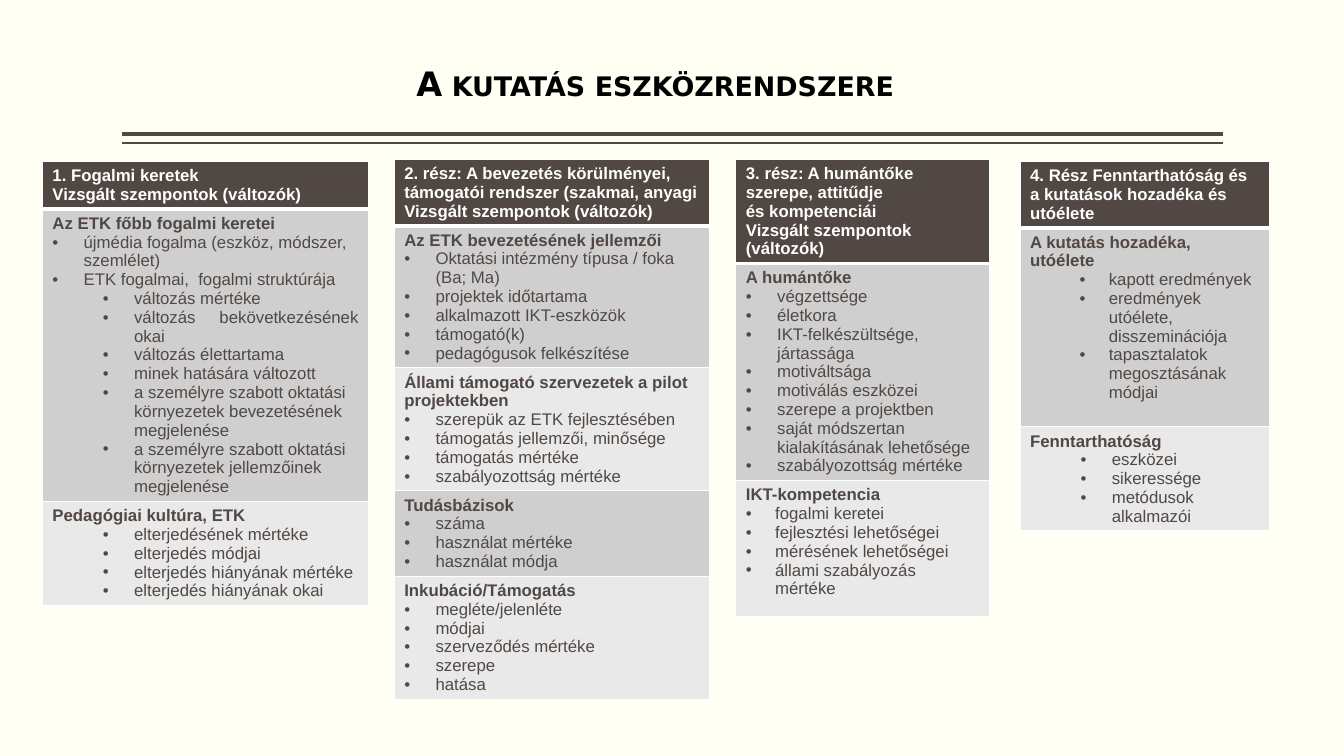
from dataclasses import dataclass

from lxml.etree import SubElement
from pptx import Presentation
from pptx.dml.color import RGBColor
from pptx.enum.shapes import MSO_CONNECTOR as Connector
from pptx.enum.text import MSO_ANCHOR as Anchor, MSO_AUTO_SIZE as AutoSize, PP_ALIGN as Align
from pptx.oxml.ns import qn
from pptx.util import Inches, Pt


@dataclass(frozen=True)
class Theme:
    background: str = "FFFFF3"
    dark: str = "514843"
    white: str = "FFFFFF"
    black: str = "000000"
    bands: tuple = ("D0CFCF", "E9E9E9")
    title_font: str = "DejaVu Sans"
    body_font: str = "Arial"
    title_size: int = 24
    body_size: int = 12


@dataclass(frozen=True)
class ListStyle:
    left: float = 0.31
    hanging: float = 0.31
    align: Align = None
    level: int = 0


@dataclass(frozen=True)
class Box:
    left: float
    top: float
    width: float
    height: float = 0


THEME = Theme()
PLAIN = ListStyle(0, 0)
JUSTIFIED = ListStyle(0, 0, Align.JUSTIFY)
OUTER = ListStyle()
TIGHT = ListStyle(0.29, 0.29)
INNER = ListStyle(0.81, 0.31)
INNER_JUSTIFIED = ListStyle(0.81, 0.31, Align.JUSTIFY)
SUBLEVEL = ListStyle(0.81, 0.31, level=1)
SUBLEVEL_JUSTIFIED = ListStyle(0.81, 0.31, Align.JUSTIFY, 1)
OUTCOMES = ListStyle(0.78, 0.29)

# Each section: heading, heading style, space before, then (list style, items) groups.
# Boxes and row heights are percentages of the slide's width and height.
PARTS = [
    (Box(3.15, 21.33, 24.3), [6.22, 38.62, 13.76],
     "1. Fogalmi keretek \vVizsgált szempontok (változók)", [
        ("Az ETK főbb fogalmi keretei", PLAIN, 0, [
            (OUTER, ["újmédia fogalma (eszköz, módszer, szemlélet)",
                     "ETK fogalmai,  fogalmi struktúrája"]),
            (INNER_JUSTIFIED, ["változás mértéke", "változás bekövetkezésének okai",
                               "változás élettartama", "minek hatására változott"]),
            (INNER, ["a személyre szabott oktatási környezetek bevezetésének megjelenése",
                     "a személyre szabott oktatási környezetek jellemzőinek megjelenése"])]),
        ("Pedagógiai kultúra, ETK", PLAIN, 0, [
            (SUBLEVEL, ["elterjedésének mértéke", "elterjedés módjai",
                        "elterjedés hiányának mértéke", "elterjedés hiányának okai"])])]),
    (Box(29.33, 21.07, 23.48), [8.6, 18.78, 16.27, 11.24, 16.27],
     "2. rész: A bevezetés körülményei, támogatói rendszer (szakmai, anyagi "
     "Vizsgált szempontok (változók)", [
        ("Az ETK bevezetésének jellemzői", PLAIN, 0, [
            (OUTER, ["Oktatási intézmény típusa / foka (Ba; Ma)", "projektek időtartama",
                     "alkalmazott IKT-eszközök", "támogató(k)",
                     "pedagógusok felkészítése"])]),
        ("Állami támogató szervezetek a pilot projektekben", PLAIN, 0, [
            (OUTER, ["szerepük az ETK fejlesztésében", "támogatás jellemzői, minősége",
                     "támogatás mértéke", "szabályozottság mértéke"])]),
        ("Tudásbázisok", PLAIN, 6, [
            (OUTER, ["száma", "használat mértéke", "használat módja"])]),
        ("Inkubáció/Támogatás", PLAIN, 0, [
            (OUTER, ["megléte/jelenléte", "módjai", "szerveződés mértéke",
                     "szerepe", "hatása"])])]),
    (Box(54.75, 21.07, 18.9), [13.62, 28.7, 17.99],
     "3. rész: A humántőke szerepe, attitűdje \vés kompetenciái\v"
     "Vizsgált szempontok (változók)", [
        ("A humántőke", PLAIN, 6, [
            (OUTER, ["végzettsége", "életkora", "IKT-felkészültsége, jártassága",
                     "motiváltsága", "motiválás eszközei", "szerepe a projektben",
                     "saját módszertan kialakításának lehetősége",
                     "szabályozottság mértéke"])]),
        ("IKT-kompetencia", PLAIN, 6, [
            (TIGHT, ["fogalmi keretei", "fejlesztési lehetőségei",
                     "mérésének lehetőségei", "állami szabályozás mértéke"])])]),
    (Box(75.9, 21.33, 18.53), [8.6, 26.32, 13.76],
     "4. Rész Fenntarthatóság és a kutatások hozadéka és utóélete", [
        ("A kutatás hozadéka, utóélete", PLAIN, 0, [
            (OUTCOMES, ["kapott eredmények", "eredmények utóélete, disszeminációja",
                        "tapasztalatok megosztásának módjai"])]),
        ("Fenntarthatóság", JUSTIFIED, 6, [
            (SUBLEVEL_JUSTIFIED, ["eszközei", "sikeressége", "metódusok alkalmazói"])])]),
]

presentation = Presentation()
presentation.slide_width = Inches(13.33)
presentation.slide_height = Inches(7.5)


def across(percent):
    return round(presentation.slide_width * percent / 100)


def down(percent):
    return round(presentation.slide_height * percent / 100)


def color(value):
    return RGBColor.from_string(value)


def write(frame, text, *, font=THEME.body_font, size=THEME.body_size, ink=THEME.dark,
          bold=False, style=PLAIN, before=0, spacing=None):
    """Write one paragraph, filling the frame's empty first one if there is one."""
    paragraph = frame.paragraphs[-1]
    if paragraph.text:
        paragraph = frame.add_paragraph()
    paragraph.text = text
    paragraph.alignment = style.align
    paragraph.level = style.level
    paragraph.line_spacing = spacing
    if before:
        paragraph.space_before = Pt(before)
    for run in paragraph.runs:
        run.font.name, run.font.size, run.font.bold = font, Pt(size), bold
        run.font.color.rgb = color(ink)
    if style.left:
        properties = paragraph._p.get_or_add_pPr()
        properties.set("marL", str(Inches(style.left)))
        properties.set("indent", str(-Inches(style.hanging)))
        SubElement(properties, qn("a:buFont")).set("typeface", THEME.body_font)
        SubElement(properties, qn("a:buChar")).set("char", "•")
    return paragraph


def set_borders(cell, **widths):
    properties = cell._tc.get_or_add_tcPr()
    for side in "LRTB":
        line = SubElement(properties, qn(f"a:ln{side}"), w=str(Pt(widths.get(side, 1))))
        fill = SubElement(line, qn("a:solidFill"))
        SubElement(fill, qn("a:srgbClr"), val=THEME.white)


def format_cell(cell, fill, **widths):
    set_borders(cell, **widths)
    cell.fill.solid()
    cell.fill.fore_color.rgb = color(fill)


def add_title(slide, box):
    title = slide.shapes.title
    title.left, title.top = across(box.left), down(box.top)
    title.width, title.height = across(box.width), down(box.height)
    frame = title.text_frame
    frame.word_wrap, frame.auto_size = True, AutoSize.NONE
    frame.vertical_anchor = Anchor.BOTTOM
    frame.margin_left = frame.margin_right = Inches(0.1)
    frame.margin_top = frame.margin_bottom = Inches(0.1)
    paragraph = write(frame, "A kutatás eszközrendszere", font=THEME.title_font,
                      size=THEME.title_size, ink=THEME.black, bold=True,
                      style=ListStyle(0, 0, Align.CENTER), spacing=0.9)
    paragraph.runs[0].font._element.set("cap", "small")


def add_double_rule(slide, box):
    for top, width in ((box.top, 3), (box.top + box.height, 1)):
        rule = slide.shapes.add_connector(Connector.STRAIGHT, across(box.left + box.width),
                                          down(top), across(box.left), down(top))
        rule.line.color.rgb = color(THEME.dark)
        rule.line.width = Pt(width)
        SubElement(rule._element.spPr, qn("a:effectLst"))


def add_part(slide, box, heights, header, sections):
    table = slide.shapes.add_table(len(heights), 1, across(box.left), down(box.top),
                                   across(box.width), down(sum(heights))).table
    for row, height in zip(table.rows, heights):
        row.height = down(height)
    # Header
    cell = table.cell(0, 0)
    format_cell(cell, THEME.dark, B=3)
    write(cell.text_frame, header, ink=THEME.white, bold=True)
    # Sections in alternating bands
    for index, (heading, style, before, groups) in enumerate(sections):
        cell = table.cell(index + 1, 0)
        format_cell(cell, THEME.bands[index % 2], T=1 if index else 3)
        write(cell.text_frame, heading, bold=True, style=style, before=before)
        for list_style, items in groups:
            for item in items:
                write(cell.text_frame, item, style=list_style)


def main():
    slide = presentation.slides.add_slide(presentation.slide_layouts[5])
    slide.background.fill.solid()
    slide.background.fill.fore_color.rgb = color(THEME.background)
    add_double_rule(slide, Box(9.08, 17.73, 81.92, 1.2))
    add_title(slide, Box(15, -1.6, 67.52, 16.67))
    for part in PARTS:
        add_part(slide, *part)
    presentation.save("out.pptx")


if __name__ == "__main__":
    main()
